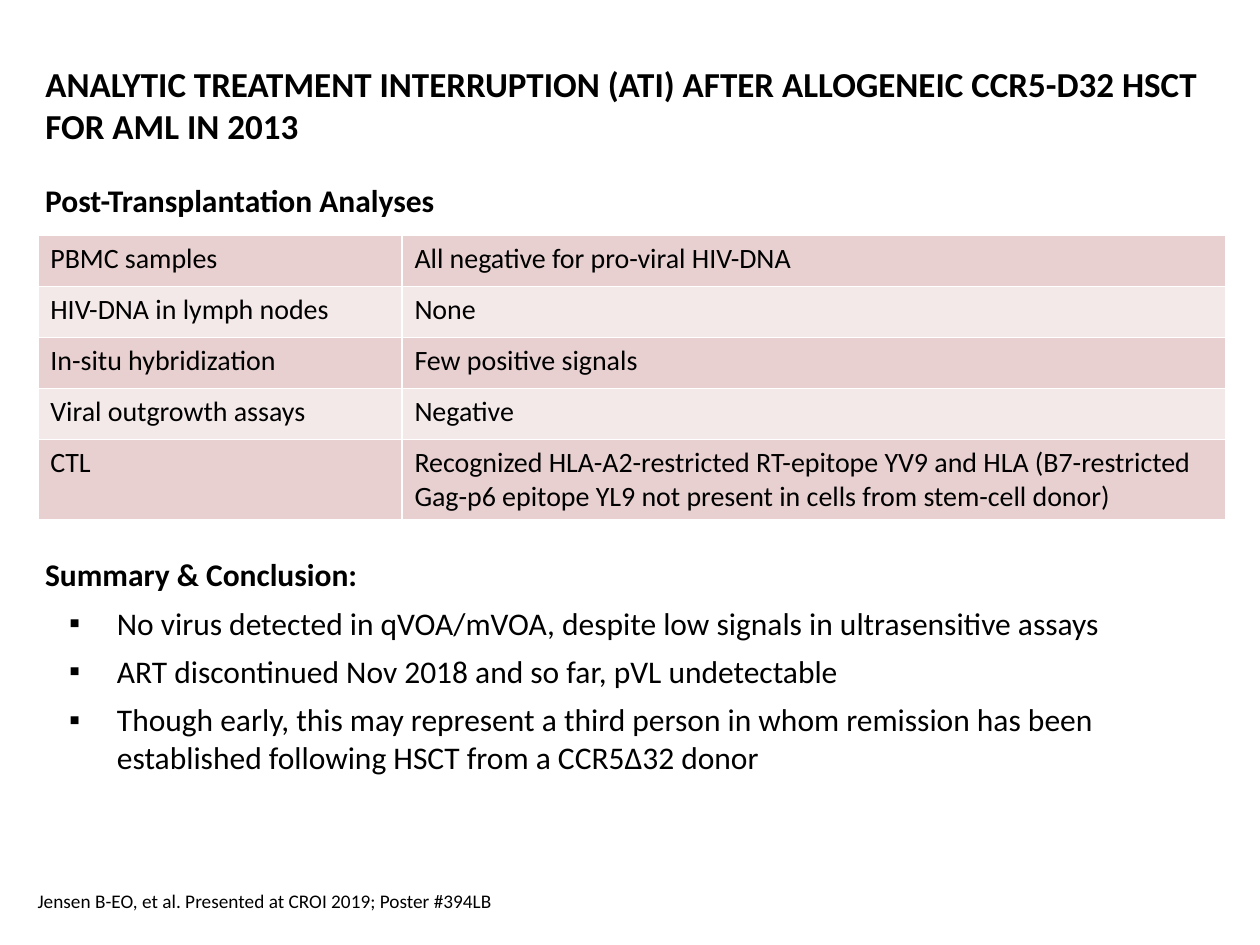
import pptx
import pptx.dml.color
import pptx.enum.text
import pptx.oxml.ns
import pptx.util
from lxml import etree
from pptx.util import Inches

BLACK = "000000"
WHITE = "FFFFFF"
BANDS = ("E8D0D0", "F4E9E9")
FONT = "Calibri"
MIDDLE = pptx.enum.text.MSO_ANCHOR.MIDDLE
TOP = pptx.enum.text.MSO_ANCHOR.TOP

TITLE = "ANALYTIC TREATMENT INTERRUPTION (ATI) AFTER ALLOGENEIC CCR5-D32 HSCT FOR AML IN 2013"
ANALYSES = [
    ("PBMC samples", "All negative for pro-viral HIV-DNA"),
    ("HIV-DNA in lymph nodes", "None"),
    ("In-situ hybridization", "Few positive signals"),
    ("Viral outgrowth assays", "Negative"),
    ("CTL", "Recognized HLA-A2-restricted RT-epitope YV9 and HLA (B7-restricted "
            "Gag-p6 epitope YL9 not present in cells from stem-cell donor)"),
]
CONCLUSIONS = [
    "No virus detected in qVOA/mVOA, despite low signals in ultrasensitive assays",
    "ART discontinued Nov 2018 and so far, pVL undetectable",
    "Though early, this may represent a third person in whom remission has been "
    "established following HSCT from a CCR5Δ32 donor",
]


def color(value):
    return pptx.dml.color.RGBColor.from_string(value)


def add_child(parent, tag, **attributes):
    return etree.SubElement(parent, pptx.oxml.ns.qn(tag), attributes)


def add_bullet(paragraph):
    properties = paragraph._p.get_or_add_pPr()
    properties.set("marL", str(Inches(0.57)))
    properties.set("indent", str(Inches(-0.38)))
    add_child(properties, "a:buFont", typeface="Arial")
    add_child(properties, "a:buChar", char="▪")


def write_text(paragraph, text, size=18, bold=False, after=0, bullet=False):
    if bullet:
        add_bullet(paragraph)
    paragraph.text = text
    paragraph.alignment = pptx.enum.text.PP_ALIGN.LEFT
    paragraph.space_before = pptx.util.Pt(0)
    paragraph.space_after = pptx.util.Pt(after)
    for font in (paragraph.font, paragraph.runs[0].font):
        font.name = FONT
        font.size = pptx.util.Pt(size)
        font.bold = bold
        font.color.rgb = color(BLACK)


def add_title(slide):
    title = slide.shapes.title
    title.left, title.top = Inches(0.26), Inches(0.36)
    title.width, title.height = Inches(9.53), Inches(0.94)
    title.text_frame.auto_size = pptx.enum.text.MSO_AUTO_SIZE.NONE
    title.text_frame.vertical_anchor = MIDDLE
    write_text(title.text_frame.paragraphs[0], TITLE, size=20, bold=True)


def add_text_box(slide, left, top, width, height, anchor=TOP):
    shape = slide.shapes.add_textbox(Inches(left), Inches(top), Inches(width), Inches(height))
    shape.text_frame.word_wrap = True
    shape.text_frame.vertical_anchor = anchor
    return shape.text_frame


def format_cell(cell, text, fill):
    properties = cell._tc.get_or_add_tcPr()
    for side in ("a:lnL", "a:lnR", "a:lnT", "a:lnB"):
        line = add_child(properties, side, w=str(pptx.util.Pt(1)))
        add_child(add_child(line, "a:solidFill"), "a:srgbClr", val=WHITE)
    cell.fill.solid()
    cell.fill.fore_color.rgb = color(fill)
    write_text(cell.text_frame.paragraphs[0], text, size=16)


def add_analyses_table(slide):
    table = slide.shapes.add_table(
        len(ANALYSES), 2, Inches(0.3), Inches(1.87), Inches(9.43), Inches(2.26)).table
    table.first_row = False
    table.horz_banding = False
    table.columns[0].width = Inches(2.89)
    table.columns[1].width = Inches(6.54)
    for row_index, texts in enumerate(ANALYSES):
        is_last = row_index == len(ANALYSES) - 1
        table.rows[row_index].height = Inches(0.64 if is_last else 0.405)
        for column_index, text in enumerate(texts):
            format_cell(table.cell(row_index, column_index), text, BANDS[row_index % 2])


def main():
    presentation = pptx.Presentation()
    presentation.slide_width = Inches(10)
    presentation.slide_height = Inches(7.5)
    slide = presentation.slides.add_slide(presentation.slide_layouts[5])

    add_title(slide)
    heading = add_text_box(slide, 0.26, 1.39, 9.53, 0.42)
    write_text(heading.paragraphs[0], "Post-Transplantation Analyses", bold=True)
    add_analyses_table(slide)

    summary = add_text_box(slide, 0.26, 4.36, 9.53, 2.5)
    write_text(summary.paragraphs[0], "Summary & Conclusion:", bold=True, after=6)
    for conclusion in CONCLUSIONS:
        write_text(summary.add_paragraph(), conclusion, after=6, bullet=True)

    citation = add_text_box(slide, 0.2, 6.95, 9.61, 0.4, anchor=MIDDLE)
    write_text(citation.paragraphs[0],
               "Jensen B-EO, et al. Presented at CROI 2019; Poster #394LB", size=11)
    presentation.save("out.pptx")


if __name__ == "__main__":
    main()
